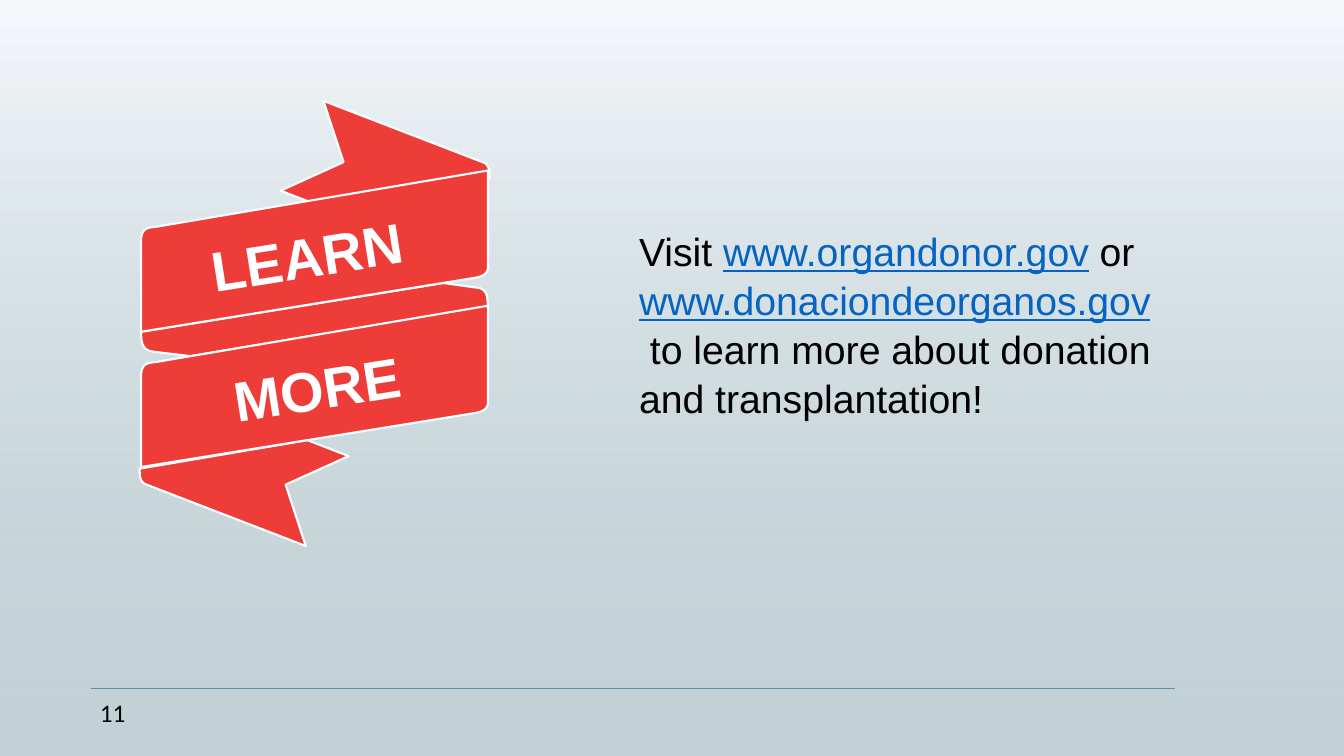
"""Build the closing slide with a folded ribbon and two web addresses."""
from lxml.etree import SubElement
from pptx import Presentation
from pptx.dml.color import RGBColor
from pptx.enum.shapes import MSO_CONNECTOR, MSO_SHAPE
from pptx.enum.text import MSO_ANCHOR, PP_ALIGN
from pptx.oxml.ns import qn
from pptx.util import Inches, Pt

COLUMNS, ROWS = 16, 9
CELL = Inches(7.5) / ROWS
RED, WHITE, BLACK, LINK_BLUE = "EE3C39", "FFFFFF", "000000", "0563C1"
BAND_STEP = 1.61
TURN_CENTRE = (3.745, 3.85)

TAIL = [(3.85, 1.2), (5.77, 1.94),
        ((5.84, 1.99), (5.82, 2.06), (5.83, 2.12)),
        (3.83, 2.46), (3.34, 2.27), (4.09, 1.93)]
FOLD = [(1.68, 3.95), (5.28, 3.37), (5.71, 3.43),
        ((5.82, 3.46), (5.8, 3.58), (5.81, 3.65)),
        (2.27, 4.24), (1.85, 4.19),
        ((1.79, 4.18), (1.67, 4.19), (1.68, 3.95))]
BAND = [(1.68, 2.89), ((1.67, 2.7), (1.78, 2.71), (1.86, 2.7)),
        (5.81, 2.03), (5.81, 3.17),
        ((5.81, 3.24), (5.78, 3.29), (5.64, 3.31)), (1.68, 3.95)]


def cells(*values):
    """Turn grid cells into slide lengths."""
    return [round(value * CELL) for value in values]


def color(hex_text):
    """Turn a hex string into a colour."""
    return RGBColor.from_string(hex_text)


def curve(start, controls, steps=8):
    """Return points along a cubic curve after its start."""
    points = []
    for step in range(1, steps + 1):
        t = step / steps
        weights = ((1 - t) ** 3, 3 * t * (1 - t) ** 2, 3 * t * t * (1 - t), t ** 3)
        points.append(tuple(
            sum(weight * point[axis] for weight, point in zip(weights, (start, *controls)))
            for axis in (0, 1)))
    return points


def outline(pieces):
    """Expand corners and curves into one list of points."""
    points = []
    for piece in pieces:
        points += curve(points[-1], piece) if len(piece) == 3 else [piece]
    return points


def half_turn(points):
    """Turn points by 180 degrees about the ribbon's centre."""
    return [(2 * TURN_CENTRE[0] - x, 2 * TURN_CENTRE[1] - y) for x, y in points]


def shift_down(points, rows):
    """Move points down by a number of rows."""
    return [(x, y + rows) for x, y in points]


def add_ribbon_part(page, points):
    """Draw one red piece of the ribbon with a white edge."""
    corners = [tuple(cells(*point)) for point in points]
    builder = page.shapes.build_freeform(*corners[0])
    builder.add_line_segments(corners[1:], close=True)
    part = builder.convert_to_shape()
    part.shadow.inherit = False
    part.fill.solid()
    part.fill.fore_color.rgb = color(RED)
    part.line.color.rgb = color(WHITE)
    part.line.width = Pt(1.5)


def add_backdrop(page):
    """Cover the slide with a gradient that fades to translucent."""
    backdrop = page.shapes.add_shape(MSO_SHAPE.RECTANGLE, *cells(0, 0, COLUMNS, ROWS))
    backdrop.shadow.inherit = False
    backdrop.line.fill.background()
    backdrop.fill.gradient()
    backdrop.fill.gradient_angle = 270
    stops = zip(backdrop.fill.gradient_stops, (0, 1), ("F6F8FC", "92AFB6"))
    for stop, position, shade in stops:
        stop.position = position
        stop.color.rgb = color(shade)
    last_shade = backdrop.element.spPr.findall(".//" + qn("a:srgbClr"))[-1]
    SubElement(last_shade, qn("a:alpha"), val="56000")


def add_rule(page, left, right, row):
    """Draw the thin footer rule."""
    rule = page.shapes.add_connector(MSO_CONNECTOR.STRAIGHT, *cells(left, row, right, row))
    rule.line.color.rgb = color("046288")
    rule.line.width = Pt(1)
    SubElement(rule.element.spPr, qn("a:effectLst"))


def add_text(page, area, spans, size, font="Arial", bold=False, align=PP_ALIGN.LEFT,
             anchor=MSO_ANCHOR.TOP, rotation=0, spacing=1.0):
    """Add a text box holding one paragraph of (text, colour, underline) spans."""
    box = page.shapes.add_textbox(*cells(*area))
    box.rotation = rotation
    frame = box.text_frame
    frame.word_wrap = True
    frame.vertical_anchor = anchor
    para = frame.paragraphs[0]
    para.alignment = align
    para.line_spacing = spacing
    for text, shade, underline in spans:
        span = para.add_run()
        span.text = text
        span.font.name = font
        span.font.size = Pt(size)
        span.font.bold = bold
        span.font.underline = underline
        span.font.color.rgb = color(shade)


def main():
    """Build and save the slide."""
    deck = Presentation()
    deck.slide_width, deck.slide_height = cells(COLUMNS, ROWS)
    page = deck.slides.add_slide(deck.slide_layouts[6])

    add_rule(page, 1.08, 13.99, 8.2)
    add_backdrop(page)
    add_text(page, (7.49, 2.63, 6.38, 2.94), [
        ("Visit ", BLACK, False),
        ("www.organdonor.gov", LINK_BLUE, True),
        (" or ", BLACK, False),
        ("www.donaciondeorganos.gov", LINK_BLUE, True),
        ("  to learn more about donation and transplantation!", BLACK, False),
    ], 28, spacing=1.04)
    add_text(page, (1.07, 8.24, 3.6, 0.48), [("11", BLACK, False)], 18, font="Calibri")

    tail, band = outline(TAIL), outline(BAND)
    for points in (tail, half_turn(tail), outline(FOLD), band, shift_down(band, BAND_STEP)):
        add_ribbon_part(page, points)
    for word, left, top in (("LEARN", 2.04, 2.58), ("MORE", 2.16, 4.15)):
        add_text(page, (left, top, 3.22, 0.92), [(word, WHITE, False)], 40, bold=True,
                 align=PP_ALIGN.CENTER, anchor=MSO_ANCHOR.MIDDLE, rotation=351)

    deck.save("out.pptx")


if __name__ == "__main__":
    main()
